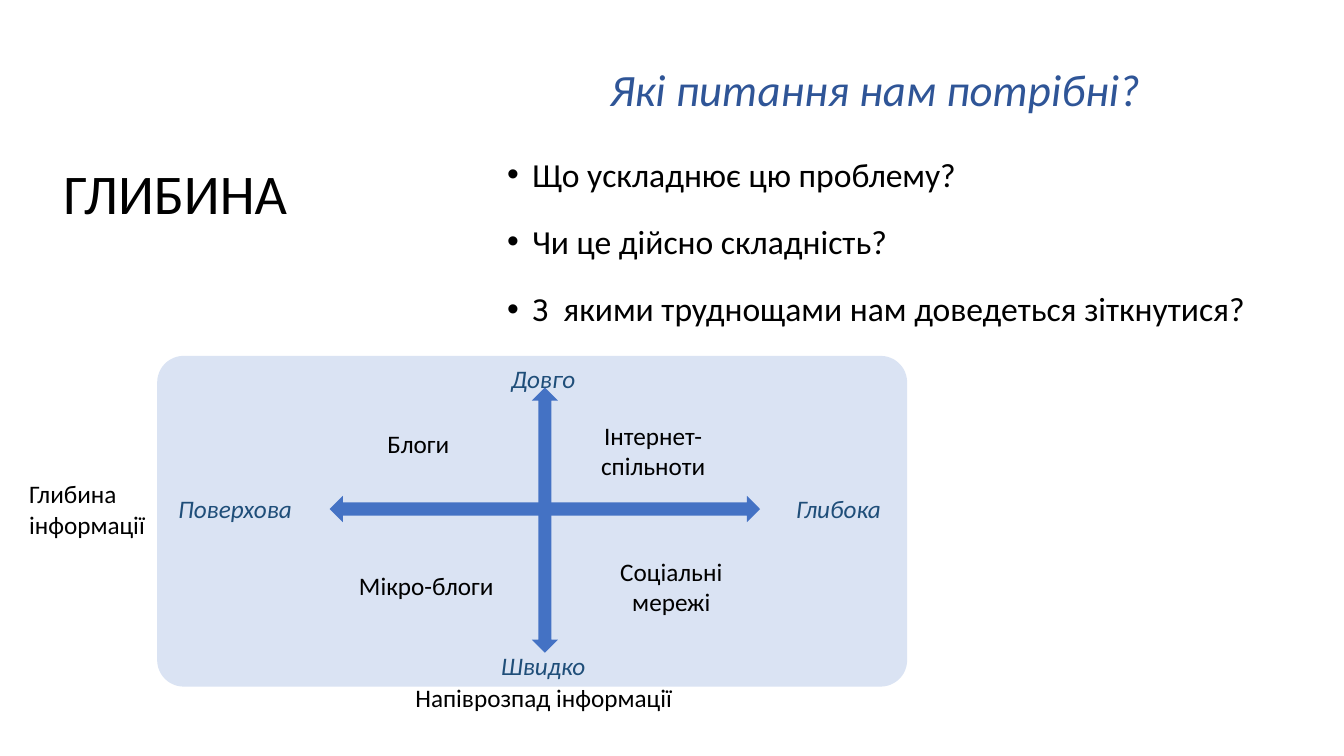
"""Build the slide on information depth with its four-quadrant diagram."""
from lxml import etree
from pptx import Presentation
from pptx import util as u
from pptx.dml.color import RGBColor
from pptx.enum import shapes, text
from pptx.oxml import ns

BLACK = RGBColor(0x00, 0x00, 0x00)
TITLE_BLUE = RGBColor(0x2F, 0x55, 0x97)
AXIS_BLUE = RGBColor(0x1F, 0x4E, 0x79)
ARROW_BLUE = RGBColor(0x44, 0x72, 0xC4)
PANEL_BLUE = RGBColor(0xDA, 0xE3, 0xF3)
LEFT, CENTER = text.PP_ALIGN.LEFT, text.PP_ALIGN.CENTER
LABEL_WIDTH = 118


class SlideBuilder:
    font_name = "Calibri"

    def __init__(self, slide):
        self.slide = slide

    def add_words(self, paragraph, words, size, color, italic=False, align=LEFT):
        paragraph.alignment = align
        run = paragraph.add_run()
        run.text = words
        run.font.name = self.font_name
        run.font.size = u.Pt(size)
        run.font.italic = italic
        run.font.color.rgb = color

    def place(self, shape, left, top, width, height, anchor):
        shape.left, shape.top = u.Pt(left), u.Pt(top)
        shape.width, shape.height = u.Pt(width), u.Pt(height)
        frame = shape.text_frame
        frame.word_wrap = True
        frame.auto_size = text.MSO_AUTO_SIZE.NONE
        frame.vertical_anchor = anchor
        return frame

    def title(self, words, *box):
        frame = self.place(self.slide.shapes.title, *box, text.MSO_ANCHOR.MIDDLE)
        paragraph = frame.paragraphs[0]
        paragraph.line_spacing = 0.9
        self.add_words(paragraph, words, 32, TITLE_BLUE, italic=True)

    def bullets(self, items, *box):
        frame = self.place(self.slide.placeholders[1], *box, text.MSO_ANCHOR.TOP)
        for index, words in enumerate(items):
            paragraph = frame.add_paragraph() if index else frame.paragraphs[0]
            properties = paragraph._p.get_or_add_pPr()
            properties.set("marL", str(u.Pt(18)))
            properties.set("indent", str(u.Pt(-18)))
            etree.SubElement(properties, ns.qn("a:buFont"), typeface="Arial")
            etree.SubElement(properties, ns.qn("a:buChar"), char="•")
            paragraph.line_spacing = 0.9
            paragraph.space_before = u.Pt(10 if index else 0)
            paragraph.space_after = u.Pt(12)
            self.add_words(paragraph, words, 24, BLACK)

    def label(self, words, left, top, width=LABEL_WIDTH, height=29, size=18,
              color=BLACK, italic=False, align=CENTER):
        box = self.slide.shapes.add_textbox(
            u.Pt(left), u.Pt(top), u.Pt(width), u.Pt(height))
        frame = box.text_frame
        frame.word_wrap = True
        self.add_words(frame.paragraphs[0], words, size, color, italic, align)

    def block(self, kind, color, left, top, width, height):
        shape = self.slide.shapes.add_shape(
            kind, u.Pt(left), u.Pt(top), u.Pt(width), u.Pt(height))
        shape.shadow.inherit = False
        shape.fill.solid()
        shape.fill.fore_color.rgb = color
        shape.line.fill.background()
        return shape

    def axis(self, center_x, center_y, length, rotation=0):
        thickness = 18.7
        arrow = self.block(
            shapes.MSO_SHAPE.LEFT_RIGHT_ARROW, ARROW_BLUE,
            center_x - length / 2, center_y - thickness / 2, length, thickness)
        arrow.rotation = rotation


def main():
    presentation = Presentation()
    presentation.slide_width, presentation.slide_height = u.Pt(960), u.Pt(540)
    slide = presentation.slides.add_slide(presentation.slide_layouts[1])
    builder = SlideBuilder(slide)

    builder.title("Які питання нам потрібні?", 428.4, 20.9, 465.8, 89.3)
    builder.bullets(
        ["Що ускладнює цю проблему?",
         "Чи це дійсно складність?",
         "З  якими труднощами нам доведеться зіткнутися?"],
        355, 109.4, 567.4, 175.7)
    builder.label("ГЛИБИНА", 38.2, 109.4, 353.5, 55.4, size=40, align=LEFT)

    panel = builder.block(shapes.MSO_SHAPE.ROUNDED_RECTANGLE, PANEL_BLUE,
                          112.3, 254.2, 535.7, 236.2)
    panel.adjustments[0] = 0.08

    builder.label("Глибина інформації", 13.7, 338.4, height=51, align=LEFT)
    builder.label("Напіврозпад інформації", 272.9, 483.8, width=231)

    for words, left, top, align in [
            ("Поверхова", 120.2, 348.5, LEFT),
            ("Глибока", 561.6, 348.5, LEFT),
            ("Швидко", 329, 460.8, CENTER),
            ("Довго", 329, 255.6, CENTER)]:
        builder.label(words, left, top, color=AXIS_BLUE, italic=True, align=align)

    builder.axis(389.2, 363.6, 307.4)
    builder.axis(389.2, 371.5, 189.4, rotation=90)

    for words, left, top, height in [
            ("Блоги", 239.8, 302.4, 29),
            ("Мікро-блоги", 245.5, 403.9, 29),
            ("Соціальні мережі", 420.5, 393.8, 51),
            ("Інтернет-спільноти", 407.5, 296.6, 51)]:
        builder.label(words, left, top, height=height)

    presentation.save("out.pptx")


if __name__ == "__main__":
    main()
